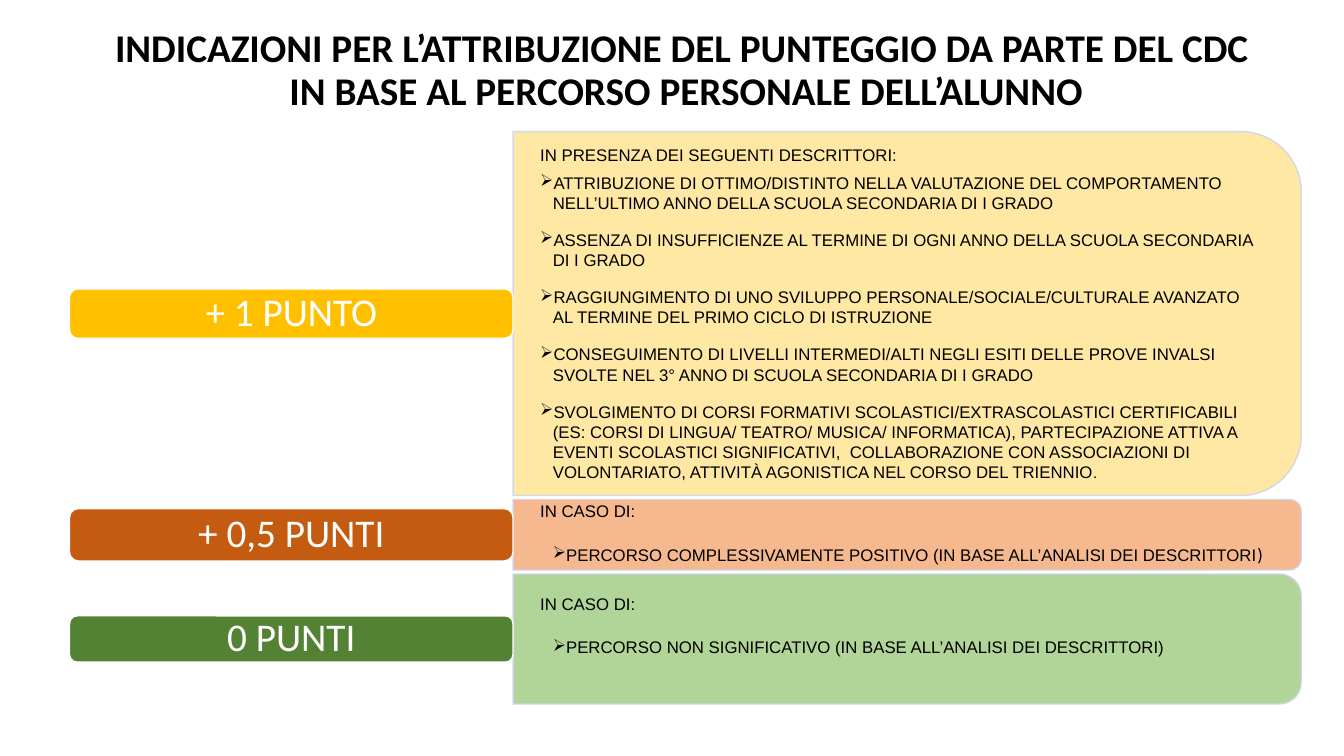
from lxml.etree import SubElement
from pptx import Presentation
from pptx.dml.color import RGBColor
from pptx.enum.shapes import MSO_SHAPE
from pptx.enum.text import MSO_ANCHOR, PP_ALIGN
from pptx.oxml.ns import qn
from pptx.util import Pt

TITLE = ("INDICAZIONI PER L’ATTRIBUZIONE DEL PUNTEGGIO DA PARTE DEL CDC \v"
         "IN BASE AL PERCORSO PERSONALE DELL’ALUNNO")

BANDS = [
    {
        "score": "+ 1 PUNTO", "score_color": "FFC000", "score_height": 35.3,
        "panel_color": "FFE699", "top": 94, "height": 260,
        "text_top": 103, "text_width": 550, "spacing": 1,
        "heading": "IN PRESENZA DEI SEGUENTI DESCRITTORI:", "heading_gap": 6, "indent": 9,
        "criteria": [
            "ATTRIBUZIONE DI OTTIMO/DISTINTO NELLA VALUTAZIONE DEL COMPORTAMENTO "
            "NELL’ULTIMO ANNO DELLA SCUOLA SECONDARIA DI I GRADO",
            "ASSENZA DI INSUFFICIENZE AL TERMINE DI OGNI ANNO DELLA SCUOLA SECONDARIA DI I GRADO",
            "RAGGIUNGIMENTO DI UNO SVILUPPO PERSONALE/SOCIALE/CULTURALE AVANZATO "
            "AL TERMINE DEL PRIMO CICLO DI ISTRUZIONE",
            "CONSEGUIMENTO DI LIVELLI INTERMEDI/ALTI NEGLI ESITI DELLE PROVE INVALSI "
            "SVOLTE NEL 3° ANNO DI SCUOLA SECONDARIA DI I GRADO",
            "SVOLGIMENTO DI CORSI FORMATIVI SCOLASTICI/EXTRASCOLASTICI CERTIFICABILI "
            "(ES: CORSI DI LINGUA/ TEATRO/ MUSICA/ INFORMATICA), PARTECIPAZIONE ATTIVA A "
            "EVENTI SCOLASTICI SIGNIFICATIVI,  COLLABORAZIONE CON ASSOCIAZIONI DI "
            "VOLONTARIATO, ATTIVITÀ AGONISTICA NEL CORSO DEL TRIENNIO",
        ],
        "ending": (".", 10.5),
    },
    {
        "score": "+ 0,5 PUNTI", "score_color": "C55A11", "score_height": 37.4,
        "panel_color": "F4B183", "top": 356.8, "height": 50.4,
        "text_top": 359.5, "text_width": 561, "spacing": 0.9,
        "heading": "IN CASO DI:", "heading_gap": 17.5, "indent": 18,
        "criteria": ["PERCORSO COMPLESSIVAMENTE POSITIVO (IN BASE ALL’ANALISI DEI DESCRITTORI"],
        "ending": (")", 13),
    },
    {
        "score": "0 PUNTI", "score_color": "548235", "score_height": 33.1,
        "panel_color": "A9D18E", "top": 410, "height": 92.9,
        "text_top": 426, "text_width": 559, "spacing": 0.9,
        "heading": "IN CASO DI:", "heading_gap": 17.5, "indent": 18,
        "criteria": ["PERCORSO NON SIGNIFICATIVO (IN BASE ALL’ANALISI DEI DESCRITTORI)"],
        "ending": None,
    },
]

SCORE_LEFT, SCORE_WIDTH = 49.7, 316.8
PANEL_LEFT, PANEL_WIDTH = SCORE_LEFT + SCORE_WIDTH, 563
HANGING = 9
CRITERION_GAP = 12


def color(value):
    return RGBColor.from_string(value)


def style_run(run, font, size, value, bold=False):
    run.font.name = font
    run.font.size = Pt(size)
    run.font.color.rgb = color(value)
    run.font.bold = bold


def add_box(slide, kind, left, top, width, height, fill, line):
    box = slide.shapes.add_shape(kind, Pt(left), Pt(top), Pt(width), Pt(height))
    box.shadow.inherit = False
    box.fill.solid()
    box.fill.fore_color.rgb = color(fill)
    box.line.color.rgb = color(line)
    box.line.width = Pt(1)
    return box


def add_panel(slide, band, middle):
    center = PANEL_LEFT + PANEL_WIDTH / 2
    panel = add_box(slide, MSO_SHAPE.ROUND_2_SAME_RECTANGLE,
                    center - band["height"] / 2, middle - PANEL_WIDTH / 2,
                    band["height"], PANEL_WIDTH, band["panel_color"], "CFD5EA")
    panel.rotation = 90
    for paint in panel.element.spPr.iter(qn("a:srgbClr")):
        SubElement(paint, qn("a:alpha"), val="90000")


def add_criteria(slide, band):
    box = slide.shapes.add_textbox(
        Pt(PANEL_LEFT), Pt(band["text_top"]), Pt(band["text_width"]),
        Pt(band["top"] + band["height"] - band["text_top"]))
    frame = box.text_frame
    frame.word_wrap = True
    frame.vertical_anchor = MSO_ANCHOR.TOP
    frame.margin_left = frame.margin_right = Pt(19.4)
    frame.margin_top = frame.margin_bottom = 0
    frame.text = "\n".join([band["heading"], *band["criteria"]])
    heading, *criteria = frame.paragraphs
    heading.space_after = Pt(band["heading_gap"])
    for criterion in criteria:
        criterion.space_after = Pt(CRITERION_GAP)
        properties = criterion._p.get_or_add_pPr()
        properties.set("marL", str(Pt(band["indent"])))
        properties.set("indent", str(-Pt(HANGING)))
        SubElement(properties, qn("a:buChar"), char="➢")
    for paragraph in frame.paragraphs:
        paragraph.line_spacing = band["spacing"]
        style_run(paragraph.runs[0], "Arial", 12, "000000")
    if band["ending"]:
        mark, size = band["ending"]
        ending = criteria[-1].add_run()
        ending.text = mark
        style_run(ending, "Calibri", size, "000000")


def add_score(slide, band, middle):
    score = add_box(slide, MSO_SHAPE.ROUNDED_RECTANGLE, SCORE_LEFT,
                    middle - band["score_height"] / 2, SCORE_WIDTH,
                    band["score_height"], band["score_color"], "FFFFFF")
    frame = score.text_frame
    frame.margin_top = frame.margin_bottom = 0
    frame.vertical_anchor = MSO_ANCHOR.MIDDLE
    frame.text = band["score"]
    paragraph = frame.paragraphs[0]
    paragraph.alignment = PP_ALIGN.CENTER
    paragraph.line_spacing = 0.9
    style_run(paragraph.runs[0], "Calibri", 28, "FFFFFF")


def add_title(slide):
    title = slide.shapes.title
    title.left, title.top, title.width, title.height = Pt(49.7), Pt(20.9), Pt(880.6), Pt(59.8)
    frame = title.text_frame
    frame.vertical_anchor = MSO_ANCHOR.MIDDLE
    frame.text = TITLE
    paragraph = frame.paragraphs[0]
    paragraph.alignment = PP_ALIGN.CENTER
    paragraph.line_spacing = 0.9
    for run in paragraph.runs:
        style_run(run, "Calibri", 28, "000000", bold=True)


def main():
    presentation = Presentation()
    presentation.slide_width, presentation.slide_height = Pt(960), Pt(540)
    slide = presentation.slides.add_slide(presentation.slide_layouts[5])
    add_title(slide)
    for band in BANDS:
        middle = band["top"] + band["height"] / 2
        add_panel(slide, band, middle)
        add_criteria(slide, band)
        add_score(slide, band, middle)
    presentation.save("out.pptx")


if __name__ == "__main__":
    main()
